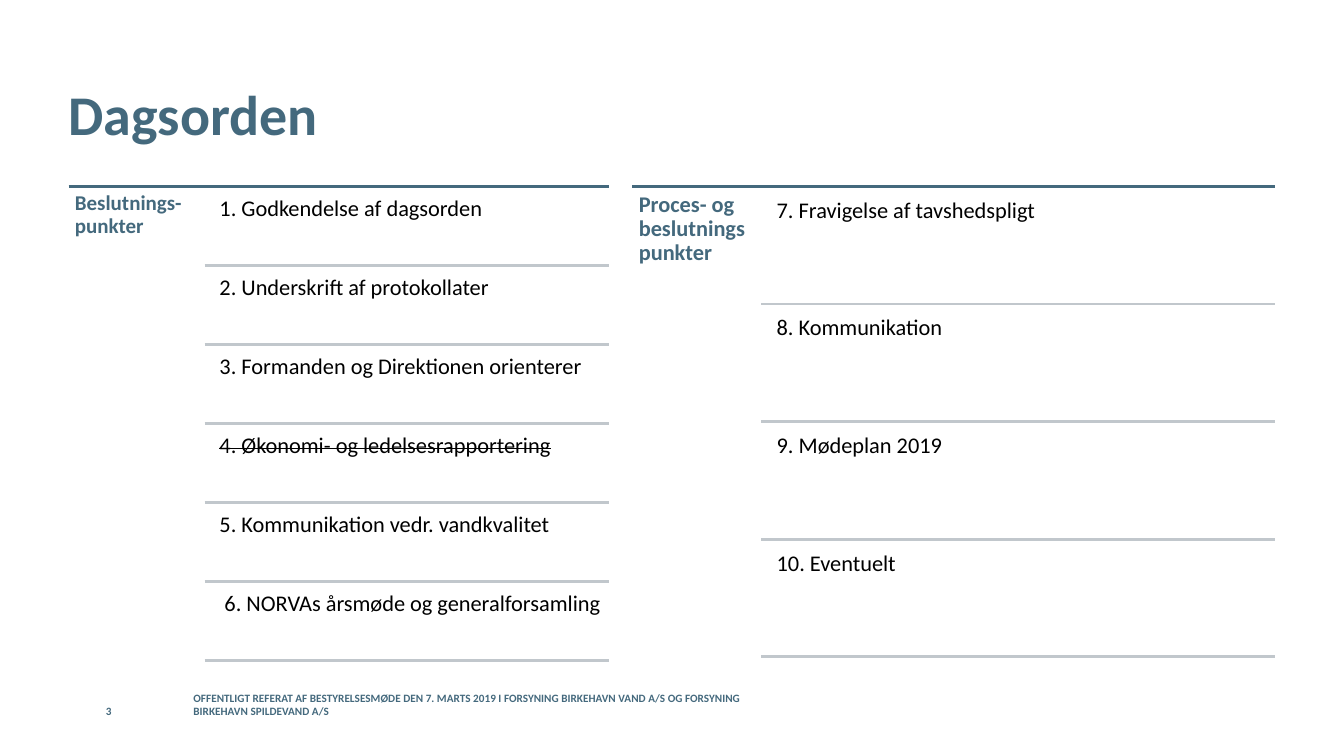
from lxml.etree import SubElement
from pptx import Presentation
from pptx.dml.color import RGBColor
from pptx.enum.shapes import MSO_CONNECTOR
from pptx.enum.text import MSO_ANCHOR
from pptx.oxml.ns import qn
from pptx.util import Pt

COLOURS = {"accent": "44697D", "rule": "C1C7CC", "body": "000000"}
AGENDA_TOP = 133.2


class AgendaSlide:
    """Draws the titled text, rules and agenda panels of one slide."""

    def __init__(self, slide, font="Calibri"):
        self.slide = slide
        self.font = font

    def colour(self, key):
        return RGBColor.from_string(COLOURS[key])

    def text(self, words, left, top, width, height, size, colour="body", bold=False,
             inset=0, indent=0, anchor=MSO_ANCHOR.TOP, spacing=1.0, strike=False):
        box = self.slide.shapes.add_textbox(Pt(left), Pt(top), Pt(width), Pt(height))
        frame = box.text_frame
        frame_format = {
            "word_wrap": True, "vertical_anchor": anchor,
            "margin_left": Pt(inset + indent), "margin_right": Pt(inset),
            "margin_top": Pt(inset), "margin_bottom": Pt(inset),
        }
        for name, value in frame_format.items():
            setattr(frame, name, value)
        paragraph = frame.paragraphs[0]
        paragraph.line_spacing = spacing
        run = paragraph.add_run()
        run.text = words
        for name, value in {"name": self.font, "size": Pt(size), "bold": bold}.items():
            setattr(run.font, name, value)
        run.font.color.rgb = self.colour(colour)
        if strike:
            run._r.get_or_add_rPr().set("strike", "sngStrike")

    def rule(self, left, right, y, colour):
        rule = self.slide.shapes.add_connector(
            MSO_CONNECTOR.STRAIGHT, Pt(left), Pt(y), Pt(right), Pt(y))
        rule.line.color.rgb = self.colour(colour)
        rule.line.width = Pt(2)
        SubElement(rule._element.spPr, qn("a:effectLst"))

    def panel(self, heading, items, left, right, heading_width, heading_size,
              heading_inset, item_left, rule_left, pitch):
        self.rule(left, right, AGENDA_TOP, "accent")
        self.text(heading, left, AGENDA_TOP, heading_width, pitch * len(items),
                  heading_size, "accent", True, inset=heading_inset, spacing=0.9)
        for row, (words, extra) in enumerate(items):
            top = AGENDA_TOP + pitch * row
            self.text(words, item_left, top + 0.05 * pitch, right - item_left,
                      0.95 * pitch, 16, inset=4.8, spacing=0.9, **extra)
            self.rule(rule_left, right, top + pitch, "rule")


def main():
    deck = Presentation()
    deck.slide_width, deck.slide_height = Pt(960), Pt(540)
    agenda = AgendaSlide(deck.slides.add_slide(deck.slide_layouts[6]))

    agenda.text("Dagsorden", 49, 28.8, 828, 104.4, 40, "accent", True,
                anchor=MSO_ANCHOR.MIDDLE)

    decisions = [
        ("1. Godkendelse af dagsorden", {}),
        ("2. Underskrift af protokollater", {}),
        ("3. Formanden og Direktionen orienterer", {}),
        ("4. Økonomi- og ledelsesrapportering", {"strike": True}),
        ("5. Kommunikation vedr. vandkvalitet", {}),
        ("6. NORVAs årsmøde og generalforsamling", {"indent": 3.6}),
    ]
    agenda.panel("Beslutnings-punkter", decisions, left=49, right=434.9,
                 heading_width=97.2, heading_size=15, heading_inset=4.5,
                 item_left=152, rule_left=146.2, pitch=56.4)

    processes = [
        ("7. Fravigelse af tavshedspligt", {}),
        ("8. Kommunikation", {}),
        ("9. Mødeplan 2019", {}),
        ("10. Eventuelt", {}),
    ]
    agenda.panel("Proces- og beslutningspunkter", processes, left=451.5, right=910.8,
                 heading_width=92.2, heading_size=16, heading_inset=4.8,
                 item_left=550, rule_left=543.6, pitch=84)

    meeting = ("OFFENTLIGT REFERAT AF BESTYRELSESMØDE DEN 7. MARTS 2019 I "
               "FORSYNING BIRKEHAVN VAND A/S OG FORSYNING BIRKEHAVN SPILDEVAND A/S")
    for words, left, width in [(meeting, 138.2, 408.2), ("3", 75.6, 49)]:
        agenda.text(words, left, 499, width, 13.7, 8, "accent", True,
                    anchor=MSO_ANCHOR.BOTTOM)

    deck.save("out.pptx")


if __name__ == "__main__":
    main()
